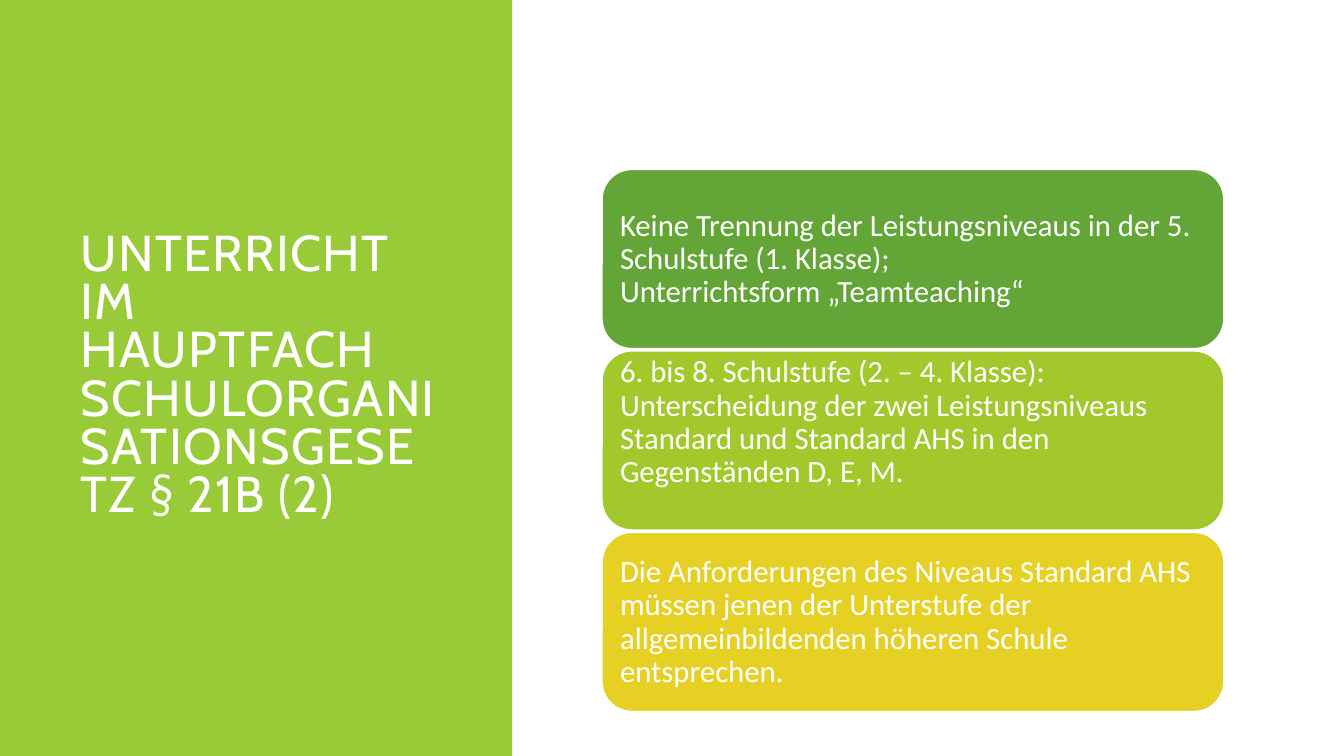
from dataclasses import dataclass

from pptx import Presentation
from pptx import util as u
from pptx.dml.color import RGBColor
from pptx.enum import shapes, text


@dataclass(frozen=True)
class Theme:
    panel: str = "99CB38"
    white: str = "FFFFFF"
    cards: tuple = ("63A537", "A2C82B", "E6D024")
    head: str = "Cabin"
    body: str = "Calibri"
    title: int = 36
    copy: int = 22


class Deck:
    """Holds the theme and the slide being filled."""

    def __init__(self, theme, slide):
        self.theme, self.slide = theme, slide

    def shape(self, kind, area, fill, line=None):
        box = self.slide.shapes.add_shape(kind, *map(u.Inches, area))
        box.shadow.inherit = False
        box.fill.solid()
        box.fill.fore_color.rgb = RGBColor.from_string(fill)
        if line:
            box.line.color.rgb = RGBColor.from_string(line)
            box.line.width = u.Pt(1.25)
        else:
            box.line.fill.background()

    def text(self, words, area, *, font, size, inset=0.09, gap=0.9, track=0):
        """Write one middle-anchored paragraph; track is letter spacing in points."""
        box = self.slide.shapes.add_textbox(*map(u.Inches, area))
        frame = box.text_frame
        frame.word_wrap = True
        frame.auto_size = text.MSO_AUTO_SIZE.NONE
        frame.vertical_anchor = text.MSO_ANCHOR.MIDDLE
        frame.margin_left = frame.margin_right = u.Inches(inset)
        frame.margin_top = frame.margin_bottom = u.Inches(inset)
        para = frame.paragraphs[0]
        para.text = words
        para.line_spacing = gap
        para.alignment = text.PP_ALIGN.LEFT
        for run in para.runs:
            run.font.name = font
            run.font.size = u.Pt(size)
            run.font.color.rgb = RGBColor.from_string(self.theme.white)
            if track:
                run.font._element.set("spc", str(track * 100))

    def card(self, words, top, fill, lift):
        """Draw a rounded card; lift raises its text above the middle."""
        self.shape(shapes.MSO_SHAPE.ROUNDED_RECTANGLE,
                   (5.97, top, 6.17, 1.78), fill, self.theme.white)
        self.text(words, (6.06, top + 0.09 - lift, 6, 1.61),
                  font=self.theme.body, size=self.theme.copy)


CARDS = (
    ("Keine Trennung der Leistungsniveaus in der 5. Schulstufe (1. Klasse);\n"
     "Unterrichtsform „Teamteaching“", 0),
    ("6. bis 8. Schulstufe (2. – 4. Klasse): Unterscheidung der zwei "
     "Leistungsniveaus Standard und Standard AHS in den Gegenständen D, E, M.",
     0.18),
    ("Die Anforderungen des Niveaus Standard AHS müssen jenen der Unterstufe "
     "der allgemeinbildenden höheren Schule entsprechen.", 0),
)


def main():
    show = Presentation()
    show.slide_width, show.slide_height = u.Inches(13.33), u.Inches(7.5)
    theme = Theme()
    deck = Deck(theme, show.slides.add_slide(show.slide_layouts[6]))
    deck.shape(shapes.MSO_SHAPE.RECTANGLE, (0, 0, 5.08, 7.5), theme.panel)
    deck.text("UNTERRICHT IM HAUPTFACH\nSCHULORGANISATIONSGESETZ § 21B (2)",
              (0.7, 0.7, 3.74, 6.09), font=theme.head, size=theme.title,
              inset=0.1, gap=0.8, track=1)
    for row, ((words, lift), fill) in enumerate(zip(CARDS, theme.cards)):
        deck.card(words, 1.68 + 1.8 * row, fill, lift)
    show.save("out.pptx")


if __name__ == "__main__":
    main()
